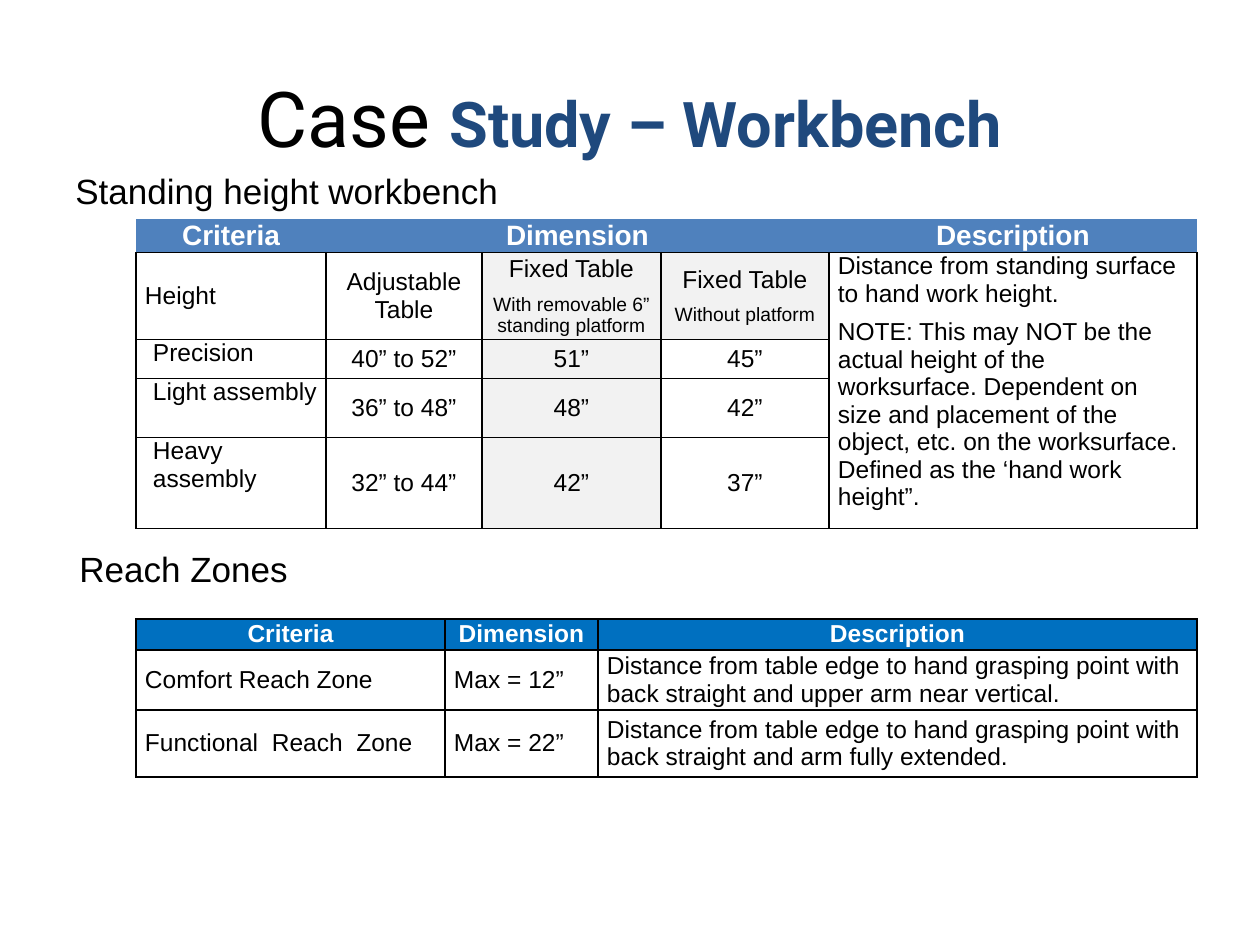
from lxml import etree
from pptx import Presentation
from pptx.dml.color import RGBColor
from pptx.enum.text import MSO_ANCHOR as Anchor, PP_ALIGN as Align
from pptx.oxml.ns import qn
from pptx.util import Pt

SCALE = 914400 / 126  # EMU in one px
BLACK, WHITE, NAVY, SHADE = "000000", "FFFFFF", "1F497D", "F2F2F2"

TITLE = [
    ("Case ", {"size": Pt(44), "bold": False}, BLACK),
    ("Study – Workbench", {"size": Pt(36), "bold": True}, NAVY),
]
HEADINGS = [
    ("Standing height workbench", 63, 168),
    ("Reach Zones", 67, 546),
]
HEIGHTS = {
    "top": 219, "cols": [190, 156, 179, 168, 368], "rows": [33, 87, 39, 59, 91],
    "header_fill": "4F81BD", "header_size": 16, "header_sides": False,
    "merges": [((0, 1), (0, 3)), ((1, 4), (4, 4))],
    "shaded": {(1, 2), (1, 3), (2, 2), (3, 2), (4, 2)},
    "top_anchored": {(1, 4), (2, 0), (3, 0), (4, 0)},
    "indented": {(2, 0), (3, 0), (4, 0)},
    "centred_cols": {1, 2, 3},
    "small_notes": {(1, 2), (1, 3)},
    "cells": [
        ["Criteria", "Dimension", "", "", "Description"],
        ["Height", "Adjustable Table",
         "Fixed Table\nWith removable 6” standing platform",
         "Fixed Table\nWithout platform",
         "Distance from standing surface to hand work height.\n"
         "NOTE: This may NOT be the actual height of the worksurface. "
         "Dependent on size and placement of the object, etc. on the "
         "worksurface. Defined as the ‘hand work height”."],
        ["Precision", "40” to 52”", "51”", "45”", ""],
        ["Light assembly", "36” to 48”", "48”", "42”", ""],
        ["Heavy assembly", "32” to 44”", "42”", "37”", ""],
    ],
}
REACH = {
    "top": 619, "cols": [309, 153, 599], "rows": [31, 60, 67],
    "header_fill": "0070C0", "header_size": 14, "header_sides": True,
    "merges": [], "shaded": set(), "top_anchored": set(), "indented": set(),
    "centred_cols": set(), "small_notes": set(),
    "cells": [
        ["Criteria", "Dimension", "Description"],
        ["Comfort Reach Zone", "Max = 12”",
         "Distance from table edge to hand grasping point with back straight "
         "and upper arm near vertical."],
        ["Functional  Reach  Zone", "Max = 22”",
         "Distance from table edge to hand grasping point with back straight "
         "and arm fully extended."],
    ],
}


def px(*lengths):
    return [round(length * SCALE) for length in lengths]


def rgb(colour):
    return RGBColor.from_string(colour)


def assign(target, values):
    for name, value in values.items():
        setattr(target, name, value)


def add_span(para, text, font, colour):
    span = para.add_run()
    span.text = text
    assign(span.font, font)
    span.font.color.rgb = rgb(colour)


def set_borders(cell, black_sides):
    """Draw the named sides in black and leave the others without a line."""
    props = cell._tc.get_or_add_tcPr()
    for index, side in enumerate("LRTB"):
        line = etree.Element(qn(f"a:ln{side}"), w=str(Pt(1)))
        if side in black_sides:
            fill = etree.SubElement(line, qn("a:solidFill"))
            etree.SubElement(fill, qn("a:srgbClr"), val=BLACK)
        else:
            etree.SubElement(line, qn("a:noFill"))
        props.insert(index, line)


def fill_cell(cell, place, text, table):
    header = place[0] == 0
    side, none = px(9, 0)
    assign(cell, {
        "margin_left": side, "margin_right": side,
        "margin_top": none, "margin_bottom": none,
        "vertical_anchor":
            Anchor.TOP if place in table["top_anchored"] else Anchor.MIDDLE,
    })
    set_borders(cell, "B" if header and not table["header_sides"] else "LRTB")
    if header or place in table["shaded"]:
        cell.fill.solid()
        cell.fill.fore_color.rgb = rgb(table["header_fill"] if header else SHADE)
    else:
        cell.fill.background()

    centred = header or place[1] in table["centred_cols"]
    for index, words in enumerate(text.split("\n")):
        frame = cell.text_frame
        para = frame.add_paragraph() if index else frame.paragraphs[0]
        para.alignment = Align.CENTER if centred else Align.LEFT
        if index:
            para.space_before = Pt(3)
        if not header:
            para.space_after = Pt(3)
        if place in table["indented"]:
            para._p.get_or_add_pPr().set("marL", str(px(8)[0]))
        size = table["header_size"] if header else 14
        if index and place in table["small_notes"]:
            size = 11
        font = {"name": "Arial", "size": Pt(size), "bold": header}
        if words:
            add_span(para, words, font, WHITE if header else BLACK)
        else:
            assign(para.font, font)


def add_criteria_table(page, table):
    cols, rows = table["cols"], table["rows"]
    frame = page.shapes.add_table(
        len(rows), len(cols), *px(136, table["top"], sum(cols), sum(rows)))
    grid = frame.table
    assign(grid, {"first_row": False, "horz_banding": False})
    for column, width in zip(grid.columns, px(*cols)):
        column.width = width
    for row, height in zip(grid.rows, px(*rows)):
        row.height = height
    for r, texts in enumerate(table["cells"]):
        for c, text in enumerate(texts):
            fill_cell(grid.cell(r, c), (r, c), text, table)
    for first, last in table["merges"]:
        grid.cell(*first).merge(grid.cell(*last))


def add_heading(page, text, left, top):
    box = page.shapes.add_textbox(*px(left, top, 935, 50))
    box.text_frame.word_wrap = True
    para = box.text_frame.paragraphs[0]
    assign(para, {"line_spacing": 0.9, "space_after": Pt(3)})
    add_span(para, text, {"name": "Arial", "size": Pt(20)}, BLACK)


def main():
    deck = Presentation()
    deck.slide_width, deck.slide_height = px(1260, 945)
    page = deck.slides.add_slide(deck.slide_layouts[5])

    title = page.shapes.title
    title.left, title.top, title.width, title.height = px(63, 38, 1134, 157)
    title.text_frame.vertical_anchor = Anchor.MIDDLE
    para = title.text_frame.paragraphs[0]
    para.alignment = Align.CENTER
    for text, font, colour in TITLE:
        add_span(para, text, {"name": "Roboto", **font}, colour)

    for heading in HEADINGS:
        add_heading(page, *heading)
    for table in (HEIGHTS, REACH):
        add_criteria_table(page, table)
    deck.save("out.pptx")


if __name__ == "__main__":
    main()
